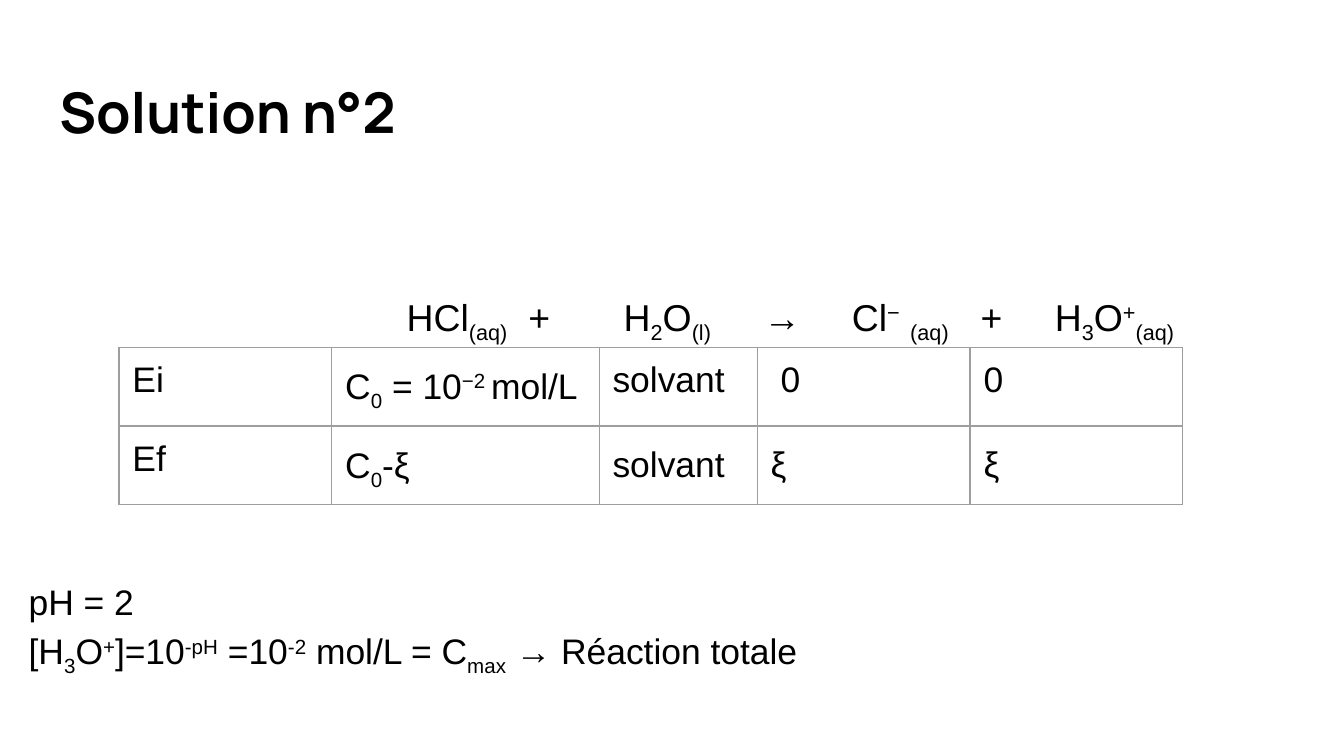
from lxml.etree import SubElement
from pptx import Presentation
from pptx.dml.color import RGBColor
from pptx.enum.text import MSO_ANCHOR as Anchor
from pptx.oxml import parse_xml
from pptx.oxml.ns import nsdecls, qn
from pptx.util import Pt

PX = 9525  # 96 px to the inch
INSET = Pt(7.2)
BASELINES = {"_": "-25000", "^": "30000"}


def paint(color, hex_color):
    color.rgb = RGBColor.from_string(hex_color)


def write(frame, text, size=19, font="Arial", bold=False, spacing=None,
          tabs=(), anchor=Anchor.TOP):
    """Fill a frame; "|" parts spans, a leading _ or ^ lowers or raises one."""
    frame.word_wrap = True
    frame.vertical_anchor = anchor
    for number, line in enumerate(text.split("\n")):
        para = frame.add_paragraph() if number else frame.paragraphs[0]
        if spacing:
            para.line_spacing = spacing
        if tabs:
            tab_list = SubElement(para._p.get_or_add_pPr(), qn("a:tabLst"))
            for stop in tabs:
                SubElement(tab_list, qn("a:tab"), pos=str(stop * PX), algn="l")
        for part in line.split("|"):
            span = para.add_run()
            span.text = part.lstrip("_^")
            span.font.size = Pt(size)
            span.font.name = font
            span.font.bold = bold
            paint(span.font.color, "000000")
            if part[0] in BASELINES:
                span.font._element.set("baseline", BASELINES[part[0]])


deck = Presentation()
deck.slide_width, deck.slide_height = 960 * PX, 540 * PX
page = deck.slides.add_slide(deck.slide_layouts[6])

# Progress table: initial and final states
columns = [152, 191, 113, 152, 152]
states = [
    [("Ei", None), ("C|_0| = 10|^−2 |mol/L", 1.15), ("solvant", None),
     (" 0", None), ("0", None)],
    [("Ef", None), ("C|_0|-ξ", 1.15), ("solvant", 1.15),
     ("ξ", 1.15), ("ξ", 1.15)],
]
table = page.shapes.add_table(len(states), len(columns), 85 * PX, 248 * PX,
                              sum(columns) * PX, 80 * PX).table
table.first_row = table.horz_banding = False
for column, width in zip(table.columns, columns):
    column.width = width * PX
for row, state in enumerate(states):
    table.rows[row].height = 40 * PX
    for col, (text, spacing) in enumerate(state):
        cell = table.cell(row, col)
        cell.margin_left = cell.margin_right = INSET
        cell.margin_top = cell.margin_bottom = INSET
        cell.fill.background()
        write(cell.text_frame, text, spacing=spacing)
        for place, side in enumerate(("lnL", "lnR", "lnT", "lnB")):
            cell._tc.tcPr.insert(place, parse_xml(
                f'<a:{side} {nsdecls("a")} w="{Pt(0.75)}"><a:solidFill>'
                f'<a:srgbClr val="9E9E9E"/></a:solidFill></a:{side}>'))

# Title, reaction equation and conclusion
equation = ("\tHCl|_(aq)|\t+\tH|_2|O|_(l)|\t→\tCl|^−| |_(aq)|"
            "\t+\tH|_3|O|^+|_(aq)")
conclusion = ("pH = 2\n"
              "[H|_3|O|^+|]=10|^-pH| =10|^-2| mol/L = C|_max| → Réaction totale")
texts = [
    ((33, 47, 895, 65), "Solution n°2",
     dict(size=30, font="Manrope", bold=True, anchor=Anchor.MIDDLE)),
    ((237, 195, 728, 315), equation,
     dict(size=20, spacing=1.15, tabs=(44, 131, 199, 299, 362, 454, 507))),
    ((11, 400, 937, 315), conclusion, dict(spacing=1.15)),
]
for place, text, style in texts:
    box = page.shapes.add_textbox(*(length * PX for length in place))
    frame = box.text_frame
    frame.margin_left = frame.margin_right = INSET
    frame.margin_top = frame.margin_bottom = INSET
    write(frame, text, **style)

deck.save("out.pptx")
